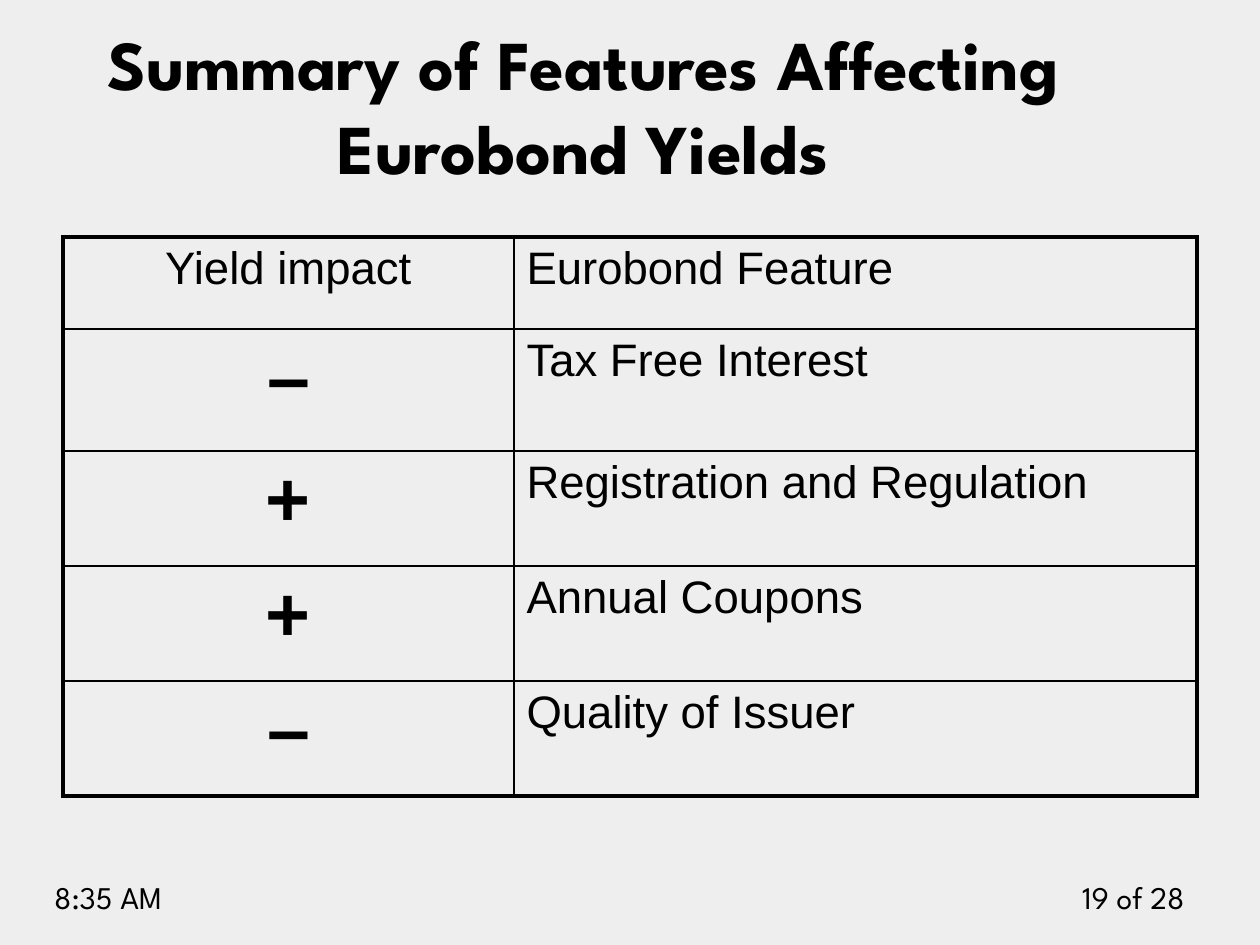
from dataclasses import dataclass

from lxml.etree import SubElement
from pptx import Presentation
from pptx.dml.color import RGBColor
from pptx.enum.text import MSO_ANCHOR as Anchor, MSO_AUTO_SIZE as AutoSize, PP_ALIGN as Align
from pptx.oxml.ns import qn
from pptx.util import Emu, Pt

PX = 914400 / 126
COLORS = {"ink": "000000", "page": "EEEEEE"}
HEAD_FONT, TABLE_FONT = "League Spartan", "Arial"
THIN, THICK = 1, 2.25


@dataclass
class Feature:
    impact: str
    name: str
    height: int
    size: int = 44
    bold: bool = True


@dataclass
class Footer:
    text: str
    left: int
    width: int
    align: Align


FEATURES = [
    Feature("Yield impact", "Eurobond Feature", 92, size=26, bold=False),
    Feature("–", "Tax Free Interest", 122),
    Feature("+", "Registration and Regulation", 115),
    Feature("+", "Annual Coupons", 115),
    Feature("–", "Quality of Issuer", 115),
]
FOOTERS = [
    Footer("19 of 28", 1050, 147, Align.RIGHT),
    Footer("8:35 AM", 42, 199, Align.LEFT),
]
COLUMNS = [451, 683]


def px(length: int) -> Emu:
    return Emu(round(length * PX))


def color(name: str) -> RGBColor:
    return RGBColor.from_string(COLORS[name])


def write(frame, text: str, *, font: str, size: int, bold: bool = False,
          align: Align = Align.LEFT) -> None:
    para = frame.paragraphs[0]
    para.alignment = align
    span = para.add_run()
    span.text = text
    span.font.name = font
    span.font.size = Pt(size)
    span.font.bold = bold
    span.font.color.rgb = color("ink")


def draw_borders(cell, widths: dict[str, float]) -> None:
    properties = cell._tc.get_or_add_tcPr()
    for side, width in widths.items():
        line = SubElement(properties, qn(f"a:ln{side}"), w=str(Pt(width)))
        fill = SubElement(line, qn("a:solidFill"))
        SubElement(fill, qn("a:srgbClr"), val=COLORS["ink"])


def draw_title(page) -> None:
    title = page.shapes.title
    title.left, title.top, title.width, title.height = map(px, (63, 16, 1040, 179))
    frame = title.text_frame
    frame.auto_size = AutoSize.NONE
    frame.vertical_anchor = Anchor.BOTTOM
    write(frame, "Summary of Features Affecting Eurobond Yields",
          font=HEAD_FONT, size=40, bold=True, align=Align.CENTER)


def draw_table(page, features: list[Feature]) -> None:
    height = sum(feature.height for feature in features)
    table = page.shapes.add_table(len(features), len(COLUMNS), px(63), px(237),
                                  px(sum(COLUMNS)), px(height)).table
    table.first_row = table.horz_banding = False
    for column, width in zip(table.columns, COLUMNS):
        column.width = px(width)
    last = len(features) - 1
    for index, feature in enumerate(features):
        table.rows[index].height = px(feature.height)
        impact, name = table.cell(index, 0), table.cell(index, 1)
        write(impact.text_frame, feature.impact, font=TABLE_FONT, size=feature.size,
              bold=feature.bold, align=Align.CENTER)
        write(name.text_frame, feature.name, font=TABLE_FONT, size=26)
        # Thick lines outside, thin lines inside
        for cell in (impact, name):
            draw_borders(cell, {
                "L": THICK if cell is impact else THIN,
                "R": THICK if cell is name else THIN,
                "T": THICK if index == 0 else THIN,
                "B": THICK if index == last else THIN,
            })
            cell.fill.background()


def draw_footer(page, footer: Footer) -> None:
    box = page.shapes.add_textbox(px(footer.left), px(872), px(footer.width), px(50))
    box.text_frame.word_wrap = True
    write(box.text_frame, footer.text, font=HEAD_FONT, size=18, align=footer.align)


def main() -> None:
    deck = Presentation()
    deck.slide_width, deck.slide_height = px(1260), px(945)
    page = deck.slides.add_slide(deck.slide_layouts[5])
    page.background.fill.solid()
    page.background.fill.fore_color.rgb = color("page")

    # Time and page number
    for footer in FOOTERS:
        draw_footer(page, footer)

    # Heading and feature table
    draw_title(page)
    draw_table(page, FEATURES)
    deck.save("out.pptx")


if __name__ == "__main__":
    main()
